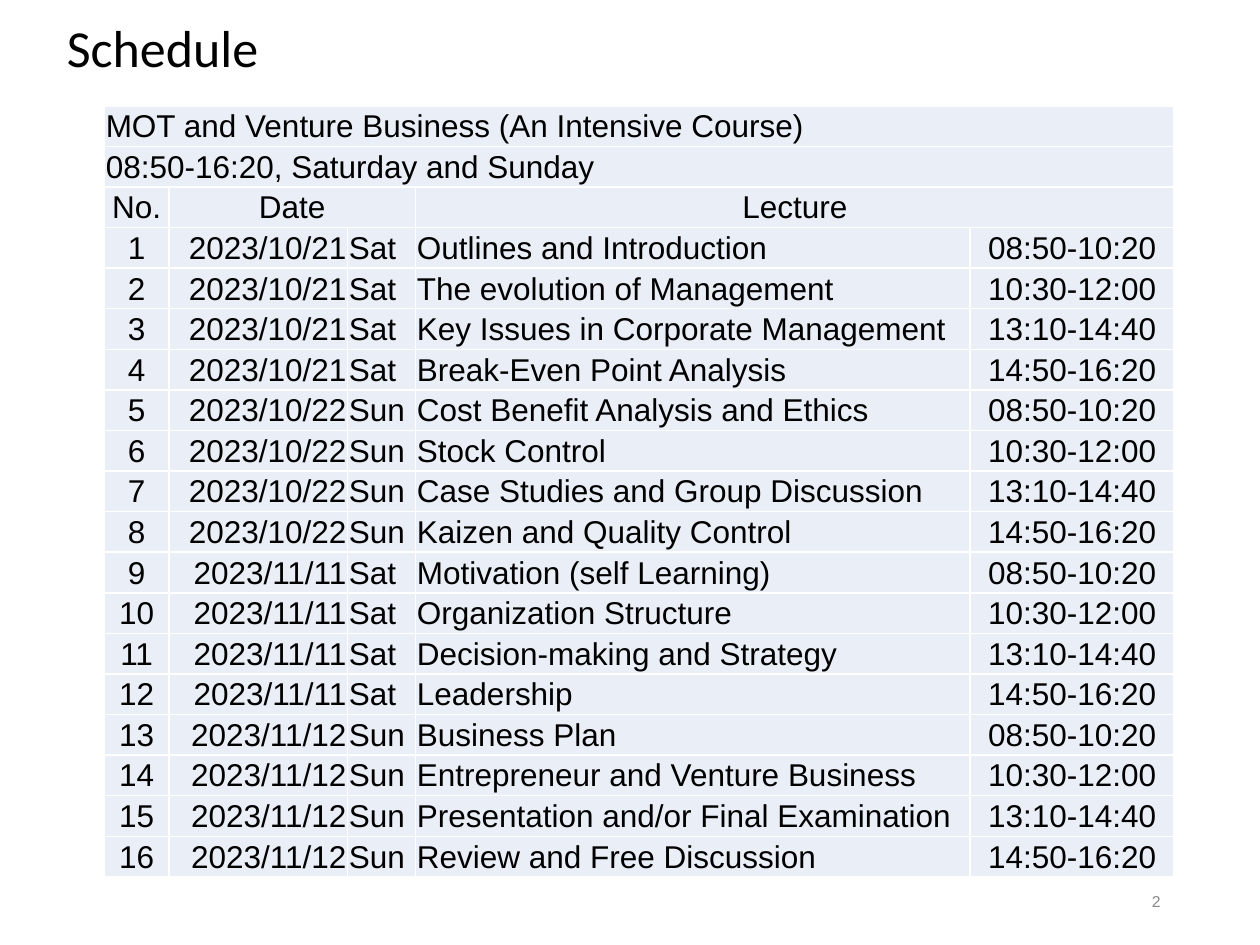
from dataclasses import dataclass
from itertools import product

from lxml.etree import SubElement
from pptx import Presentation
from pptx.dml.color import RGBColor
from pptx.enum.text import MSO_ANCHOR as Anchor, PP_ALIGN as Align
from pptx.oxml.ns import qn
from pptx.util import Inches, Pt

BLACK = RGBColor(0x00, 0x00, 0x00)
GREY = RGBColor(0x89, 0x89, 0x89)
PALE_BLUE = RGBColor(0xEA, 0xEF, 0xF7)
WHITE = RGBColor(0xFF, 0xFF, 0xFF)

COLUMN_WIDTHS = (0.51, 1.42, 0.54, 4.4, 1.62)
COLUMN_ALIGNS = (Align.CENTER, Align.RIGHT, Align.LEFT, Align.LEFT, Align.CENTER)
TABLE_HEIGHT = 6.12


@dataclass
class Heading:
    row: int
    column: int
    span: int
    text: str
    align: Align


@dataclass
class Day:
    date: str
    weekday: str
    lectures: tuple[str, ...]


HEADINGS = (
    Heading(0, 0, 5, "MOT and Venture Business (An Intensive Course)", Align.LEFT),
    Heading(1, 0, 5, "08:50-16:20, Saturday and Sunday", Align.LEFT),
    Heading(2, 0, 1, "No.", Align.CENTER),
    Heading(2, 1, 2, "Date", Align.CENTER),
    Heading(2, 3, 2, "Lecture", Align.CENTER),
)
HEADING_ROWS = 3
PERIODS = ("08:50-10:20", "10:30-12:00", "13:10-14:40", "14:50-16:20")
DAYS = (
    Day("2023/10/21", "Sat", (
        "Outlines and Introduction", "The evolution of Management",
        "Key Issues in Corporate Management", "Break-Even Point Analysis")),
    Day("2023/10/22", "Sun", (
        "Cost Benefit Analysis and Ethics", "Stock Control",
        "Case Studies and Group Discussion", "Kaizen and Quality Control")),
    Day("2023/11/11", "Sat", (
        "Motivation (self Learning)", "Organization Structure",
        "Decision-making and Strategy", "Leadership")),
    Day("2023/11/12", "Sun", (
        "Business Plan", "Entrepreneur and Venture Business",
        "Presentation and/or Final Examination", "Review and Free Discussion")),
)


def write(frame, text: str, *, size: float, font: str = "Arial",
          color: RGBColor = BLACK, align: Align = Align.LEFT,
          line_spacing: float | None = None) -> None:
    para = frame.paragraphs[0]
    para.alignment = align
    para.line_spacing = line_spacing
    span = para.add_run()
    span.text = text
    span.font.size = Pt(size)
    span.font.name = font
    span.font.color.rgb = color


def place(box, left: float, top: float, width: float, height: float) -> None:
    box.left, box.top = Inches(left), Inches(top)
    box.width, box.height = Inches(width), Inches(height)


def style_cell(cell) -> None:
    """Give a cell white borders, a pale fill and tight margins."""
    properties = cell._tc.get_or_add_tcPr()
    for side in ("lnL", "lnR", "lnT", "lnB"):
        line = SubElement(properties, qn(f"a:{side}"), w=str(Pt(1)))
        fill = SubElement(line, qn("a:solidFill"))
        SubElement(fill, qn("a:srgbClr"), val=str(WHITE))
    cell.fill.solid()
    cell.fill.fore_color.rgb = PALE_BLUE
    cell.vertical_anchor = Anchor.MIDDLE
    cell.margin_left = cell.margin_top = cell.margin_right = Inches(0.01)
    cell.margin_bottom = 0


def add_schedule(page) -> None:
    row_count = HEADING_ROWS + len(DAYS) * len(PERIODS)
    table = page.shapes.add_table(
        row_count, len(COLUMN_WIDTHS), Inches(0.83), Inches(0.84),
        Inches(sum(COLUMN_WIDTHS)), Inches(TABLE_HEIGHT)).table
    table.first_row = table.horz_banding = False
    for column, width in zip(table.columns, COLUMN_WIDTHS):
        column.width = Inches(width)
    for row in table.rows:
        row.height = Inches(TABLE_HEIGHT / row_count)
    for cell in table.iter_cells():
        style_cell(cell)

    # Heading rows
    for heading in HEADINGS:
        cell = table.cell(heading.row, heading.column)
        if heading.span > 1:
            cell.merge(table.cell(heading.row, heading.column + heading.span - 1))
        write(cell.text_frame, heading.text, size=18, align=heading.align)

    # One row per lecture, four periods a day
    for number, (day, period) in enumerate(product(DAYS, range(len(PERIODS))), 1):
        values = (str(number), day.date, day.weekday,
                  day.lectures[period], PERIODS[period])
        for column, (text, align) in enumerate(zip(values, COLUMN_ALIGNS)):
            cell = table.cell(HEADING_ROWS + number - 1, column)
            write(cell.text_frame, text, size=18, align=align)


def main() -> None:
    deck = Presentation()
    deck.slide_width, deck.slide_height = Inches(10), Inches(7.5)
    page = deck.slides.add_slide(deck.slide_layouts[5])

    # Title
    title = page.shapes.title
    place(title, 0.43, 0.13, 8.17, 0.55)
    title.text_frame.vertical_anchor = Anchor.MIDDLE
    write(title.text_frame, "Schedule", size=29.7, font="Calibri", line_spacing=0.9)

    # Page number
    number_box = page.shapes.add_textbox(0, 0, 0, 0)
    place(number_box, 7.06, 6.95, 2.25, 0.4)
    number_box.text_frame.word_wrap = True
    number_box.text_frame.vertical_anchor = Anchor.MIDDLE
    write(number_box.text_frame, "2", size=9, color=GREY, align=Align.RIGHT)

    add_schedule(page)
    deck.save("out.pptx")


if __name__ == "__main__":
    main()
